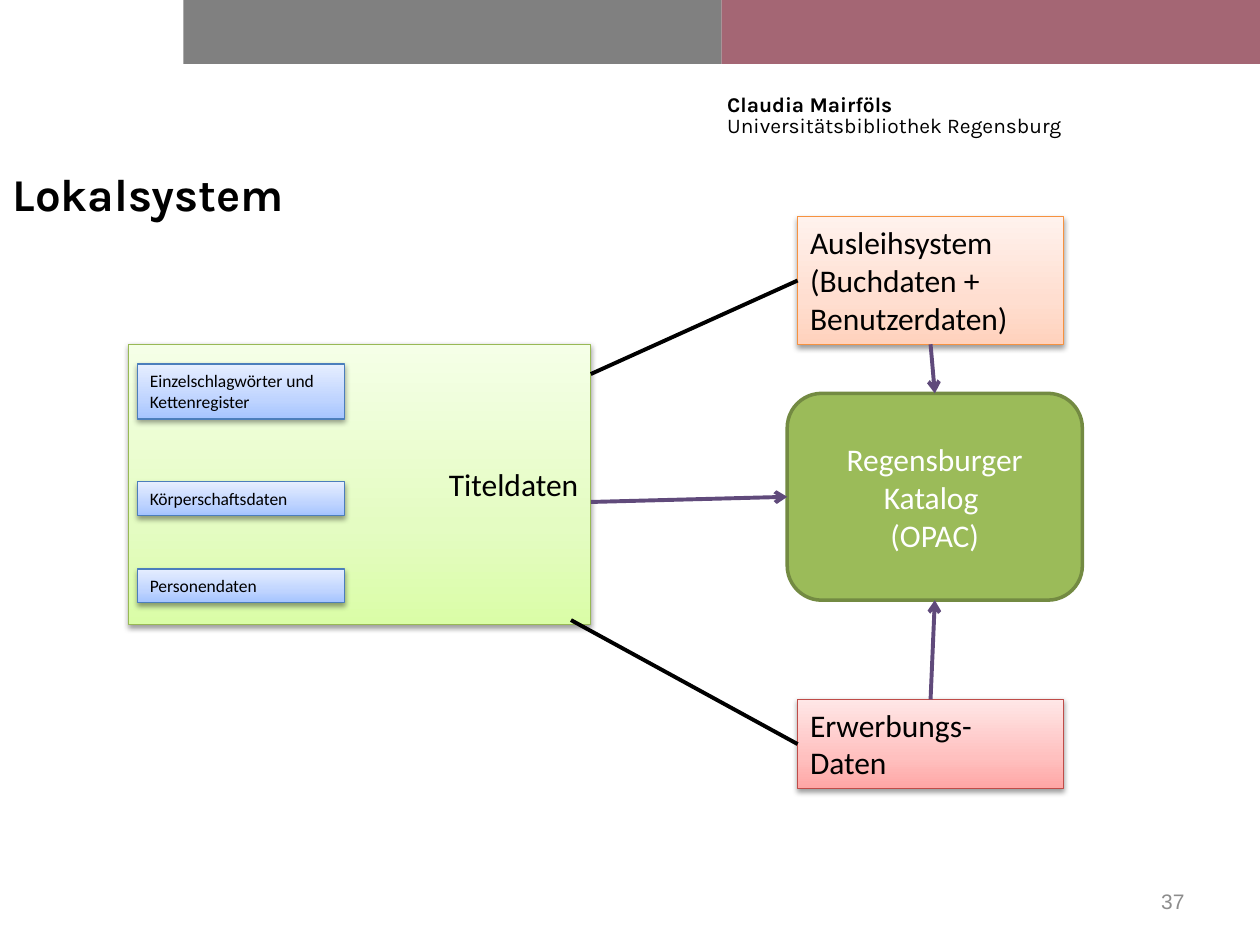
from pptx import Presentation
from pptx import util as u
from pptx.dml import color
from pptx.enum import shapes, text
from pptx.oxml import parse_xml
from pptx.oxml.ns import nsdecls

BLACK, WHITE, VIOLET = "000000", "FFFFFF", "604A7B"
GREEN = ("DAFDA7", "E4FCC2", "F5FFE7")
ORANGE = ("FFD2BD", "FFDED0", "FFF2ED")
RED = ("FFA6A5", "FFC0BF", "FFE7E7")
BLUE = ("A4C4FF", "BFD4FF", "E6EEFF")
ALIGN, ANCHOR, SHAPE = text.PP_ALIGN, text.MSO_ANCHOR, shapes.MSO_SHAPE


def rgb(value):
    return color.RGBColor.from_string(value)


def drawing(tag, attributes="", content=""):
    return parse_xml(f"<a:{tag} {nsdecls('a')} {attributes}>{content}</a:{tag}>")


class Diagram:
    """Holds the diagram style and the slide being drawn."""

    def __init__(self, slide):
        self.slide = slide
        self.font_name = "Calibri"

    def style(self, paragraph, size, hue=BLACK, name=None, bold=None, align=None):
        paragraph.font.size = u.Pt(size)
        paragraph.font.name = name or self.font_name
        paragraph.font.color.rgb = rgb(hue)
        paragraph.font.bold = bold
        paragraph.alignment = align

    def fill_text(self, frame, lines, anchor=ANCHOR.TOP, **style):
        frame.word_wrap = True
        frame.vertical_anchor = anchor
        frame.text = "\n".join(lines)
        for paragraph in frame.paragraphs:
            self.style(paragraph, **style)

    def block(self, box, fill, line=None, width=0.75, kind=SHAPE.RECTANGLE):
        shape = self.slide.shapes.add_shape(kind, *map(u.Cm, box))
        shape.shadow.inherit = False
        shape.fill.solid()
        shape.fill.fore_color.rgb = rgb(fill)
        if line:
            shape.line.color.rgb = rgb(line)
            shape.line.width = u.Pt(width)
        else:
            shape.line.fill.background()
        return shape

    def card(self, box, stops, line, lines, size=18, anchor=ANCHOR.TOP, align=ALIGN.LEFT):
        shape = self.block(box, stops[0], line)
        properties = shape._element.spPr
        colors = "".join(
            f'<a:gs pos="{position}"><a:srgbClr val="{stop}"/></a:gs>'
            for position, stop in zip((0, 35000, 100000), stops))
        gradient = drawing("gradFill", 'rotWithShape="1"',
                           f'<a:gsLst>{colors}</a:gsLst><a:lin ang="16200000" scaled="1"/>')
        properties.replace(properties.find("{*}solidFill"), gradient)
        properties.find("{*}effectLst").append(drawing(
            "outerShdw", 'blurRad="40000" dist="20000" dir="5400000" rotWithShape="0"',
            '<a:srgbClr val="000000"><a:alpha val="38000"/></a:srgbClr>'))
        self.fill_text(shape.text_frame, lines, anchor, size=size, align=align)
        return shape

    def text_box(self, box):
        return self.slide.shapes.add_textbox(*map(u.Cm, box)).text_frame

    def link(self, start, end, hue=BLACK, arrow=False):
        connector = self.slide.shapes.add_connector(shapes.MSO_CONNECTOR.STRAIGHT, 0, 0, 0, 0)
        if isinstance(start[0], (int, float)):
            connector.begin_x, connector.begin_y = map(u.Cm, start)
        else:
            connector.begin_connect(*start)
        connector.end_connect(*end)
        connector.line.color.rgb = rgb(hue)
        connector.line.width = u.Pt(2.25)
        if arrow:
            connector.line._get_or_add_ln().append(drawing("tailEnd", 'type="arrow"'))
        connector._element.spPr.append(drawing("effectLst"))

    def title(self, words, box):
        shape = self.slide.shapes.title
        shape.left, shape.top, shape.width, shape.height = map(u.Cm, box)
        self.fill_text(shape.text_frame, [words], ANCHOR.MIDDLE,
                       size=26, name="Karla", bold=True, align=ALIGN.LEFT)

    def author(self, name, institution, box):
        frame = self.text_box(box)
        frame.word_wrap = True
        frame.margin_left = frame.margin_top = frame.margin_right = frame.margin_bottom = 0
        paragraph = frame.paragraphs[0]
        run = paragraph.add_run()
        run.text = name
        run.font.bold = True
        paragraph.add_line_break()
        paragraph.add_run().text = institution
        paragraph.line_spacing = u.Pt(12)
        self.style(paragraph, 12, name="Karla")


def main():
    presentation = Presentation()
    presentation.slide_width, presentation.slide_height = u.Cm(25.4), u.Cm(19.05)
    diagram = Diagram(presentation.slides.add_slide(presentation.slide_layouts[5]))

    for left, fill in ((3.7, "808080"), (14.55, "A46674")):
        diagram.block((left, 0, 10.85, 1.29), fill)
    diagram.author("Claudia Mairföls", "Universitätsbibliothek Regensburg",
                   (14.66, 1.93, 8.97, 1.4))
    diagram.title("Lokalsystem", (0, 2.31, 22.86, 3.18))

    diagram.card((2.59, 6.94, 9.32, 5.65), GREEN, "98B955", ["Titeldaten"],
                 anchor=ANCHOR.MIDDLE, align=ALIGN.RIGHT)
    lending = diagram.card((16.08, 4.37, 5.36, 2.57), ORANGE, "F69240",
                           ["Ausleihsystem", "(Buchdaten + Benutzerdaten)"])
    acquisition = diagram.card((16.08, 14.1, 5.36, 1.8), RED, "BF4C48",
                               ["Erwerbungs-", "Daten"])
    for top, height, lines in (
            (7.34, 1.11, ["Einzelschlagwörter und", "Kettenregister"]),
            (9.71, 0.68, ["Körperschaftsdaten"]),
            (11.47, 0.68, ["Personendaten"])):
        diagram.card((2.77, top, 4.17, height), BLUE, "4B7EBC", lines, size=10)
    catalogue = diagram.block((15.87, 7.93, 5.95, 4.17), "9BBB59", "738A42", 2,
                              SHAPE.ROUNDED_RECTANGLE)
    diagram.fill_text(catalogue.text_frame, ["Regensburger Katalog ", "(OPAC)"],
                      ANCHOR.MIDDLE, size=18, hue=WHITE, align=ALIGN.CENTER)

    diagram.link((11.91, 7.54), (lending, 1))
    diagram.link((11.51, 12.5), (acquisition, 1))
    for start, side in (((11.91, 10.12), 1), ((lending, 2), 0), ((acquisition, 0), 2)):
        diagram.link(start, (catalogue, side), VIOLET, arrow=True)

    diagram.fill_text(diagram.text_box((18.2, 17.66, 5.93, 1.01)), ["37"], ANCHOR.MIDDLE,
                      size=12, hue="8C8C8C", name="Arial", align=ALIGN.RIGHT)
    presentation.save("out.pptx")


if __name__ == "__main__":
    main()
